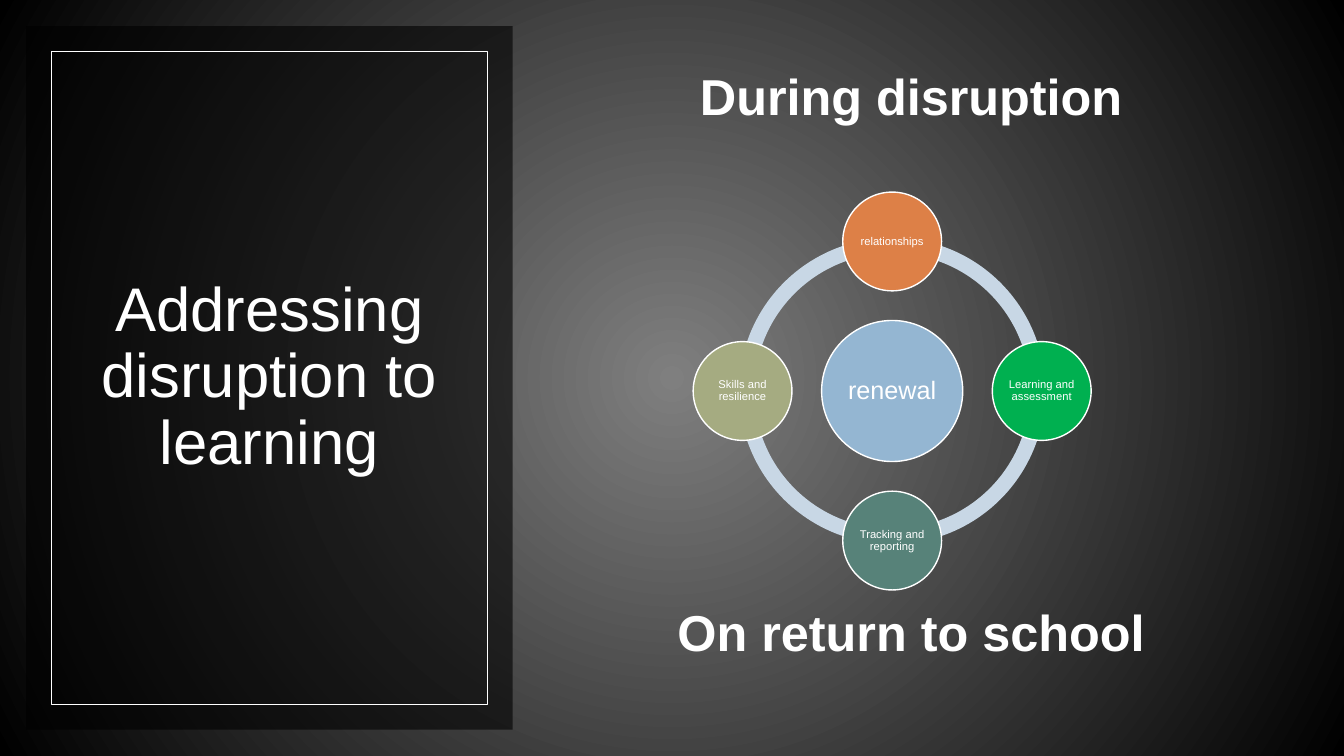
import math

from lxml import etree
from pptx import Presentation
from pptx import util as u
from pptx.dml.color import RGBColor
from pptx.enum import shapes, text
from pptx.oxml.ns import qn

WHITE = RGBColor(0xFF, 0xFF, 0xFF)
BLACK = RGBColor(0x00, 0x00, 0x00)
GREY = RGBColor(0x7F, 0x7F, 0x7F)
PALE_BLUE = RGBColor(0xC8, 0xD7, 0xE5)
BLUE = RGBColor(0x94, 0xB6, 0xD2)
ORANGE = RGBColor(0xDD, 0x80, 0x47)
GREEN = RGBColor(0x00, 0xB0, 0x50)
TEAL = RGBColor(0x57, 0x82, 0x79)
OLIVE = RGBColor(0xA5, 0xAB, 0x81)

COLUMNS, ROWS = 100, 56.25  # square grid cells across the slide


class Canvas:
    """Holds the style, the grid and the current slide."""

    font = "Arial"
    line_spacing = 0.9

    def __init__(self, deck):
        """Add a blank slide and measure its grid cell."""
        self.slide = deck.slides.add_slide(deck.slide_layouts[6])
        self.cell = deck.slide_width / COLUMNS

    def box(self, *lengths):
        """Turn grid lengths into slide lengths."""
        return [u.Emu(round(length * self.cell)) for length in lengths]

    def radial_background(self, inner, outer):
        """Fill the background with a gradient spreading from the centre."""
        fill = self.slide.background.fill
        fill.gradient()
        for stop, colour in zip(fill.gradient_stops, (inner, outer)):
            stop.color.rgb = colour
        linear = next(self.slide.element.iter(qn("a:lin")))
        radial = etree.Element(qn("a:path"), path="circle")
        etree.SubElement(radial, qn("a:fillToRect"),
                         dict.fromkeys("ltrb", "50000"))
        linear.getparent().replace(linear, radial)

    def shape(self, kind, left, top, width, height, fill=None, line=0, opacity=100):
        """Draw a preset shape, with a white outline if line has a width."""
        shape = self.slide.shapes.add_shape(kind, *self.box(left, top, width, height))
        shape.shadow.inherit = False
        if fill is None:
            shape.fill.background()
        else:
            shape.fill.solid()
            shape.fill.fore_color.rgb = fill
            if opacity < 100:
                colour = next(shape.element.spPr.iter(qn("a:srgbClr")))
                etree.SubElement(colour, qn("a:alpha"), val=str(opacity * 1000))
        if line:
            shape.line.color.rgb = WHITE
            shape.line.width = u.Pt(line)
        else:
            shape.line.fill.background()
        return shape

    def circle(self, centre_x, centre_y, size, **style):
        """Draw a circle around a centre."""
        return self.shape(shapes.MSO_SHAPE.OVAL, centre_x - size / 2,
                          centre_y - size / 2, size, size, **style)

    def ring(self, centre_x, centre_y, size, thickness, fill):
        """Draw a ring whose thickness is a share of its size."""
        ring = self.shape(shapes.MSO_SHAPE.DONUT, centre_x - size / 2,
                          centre_y - size / 2, size, size, fill)
        ring.adjustments[0] = thickness

    def add_words(self, shape, words, size, bold=False, inset=0.0):
        """Put centred white text into a shape."""
        frame = shape.text_frame
        frame.word_wrap = True
        frame.vertical_anchor = text.MSO_ANCHOR.MIDDLE
        frame.margin_left = frame.margin_right = u.Inches(inset)
        frame.margin_top = frame.margin_bottom = u.Inches(inset / 2)
        paragraph = frame.paragraphs[0]
        paragraph.alignment = text.PP_ALIGN.CENTER
        paragraph.line_spacing = self.line_spacing
        run = paragraph.add_run()
        run.text = words
        run.font.name = self.font
        run.font.size = u.Pt(size)
        run.font.bold = bold
        run.font.color.rgb = WHITE

    def label(self, left, top, width, height, words, size, bold=False):
        """Add a text box."""
        place = self.box(left, top, width, height)
        self.add_words(self.slide.shapes.add_textbox(*place), words, size, bold, 0.1)


def draw_title_panel(canvas):
    """Draw the dark panel, its inner frame and the title."""
    margin, width = 1.95, 36.2
    for inset, style in ((0, dict(fill=BLACK, opacity=60)), (1.9, dict(line=0.5))):
        edge = margin + inset
        canvas.shape(shapes.MSO_SHAPE.RECTANGLE, edge, edge,
                     width - 2 * inset, ROWS - 2 * edge, **style)
    canvas.label(5.55, 7.2, 29, 41.8, "Addressing disruption to learning", 44)


def draw_phases(canvas):
    """Set the headings above and below the cycle."""
    height = 5
    for middle, phase in ((7.35, "During disruption"), (47.3, "On return to school")):
        canvas.label(44.63, middle - height / 2, 46.35, height, phase, 36, True)


def draw_cycle(canvas):
    """Draw the ring, its hub and the themes clockwise from the top."""
    centre_x, centre_y, orbit = 66.38, 29.1, 11.13
    themes = [("relationships", ORANGE), ("Learning and assessment", GREEN),
              ("Tracking and reporting", TEAL), ("Skills and resilience", OLIVE)]
    canvas.ring(centre_x, centre_y, 22.8, 0.05, PALE_BLUE)
    hub = canvas.circle(centre_x, centre_y, 10.5, fill=BLUE, line=1)
    canvas.add_words(hub, "renewal", 18)
    for index, (theme, colour) in enumerate(themes):
        angle = math.tau * index / len(themes)
        node = canvas.circle(centre_x + orbit * math.sin(angle),
                             centre_y - orbit * math.cos(angle),
                             7.35, fill=colour, line=1)
        canvas.add_words(node, theme, 8)


def main():
    """Build the slide and save it."""
    deck = Presentation()
    deck.slide_width, deck.slide_height = u.Inches(13.33), u.Inches(7.5)
    canvas = Canvas(deck)
    canvas.radial_background(GREY, BLACK)
    draw_title_panel(canvas)
    draw_phases(canvas)
    draw_cycle(canvas)
    deck.save("out.pptx")


main()
